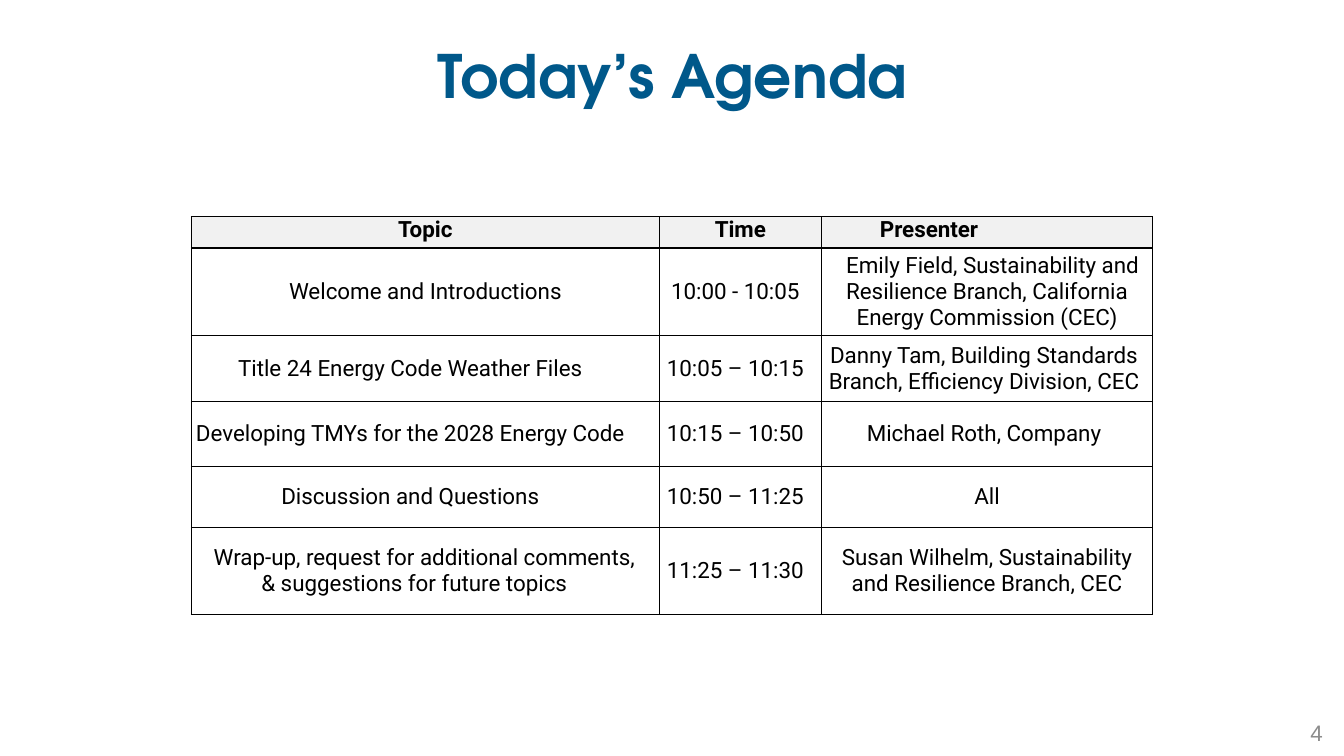
from lxml.etree import SubElement as Sub
from pptx import Presentation
from pptx.dml.color import RGBColor
from pptx.enum.text import MSO_ANCHOR as Anchor, PP_ALIGN as Align
from pptx.oxml.ns import qn
from pptx.util import Inches, Pt

WIDE, HIGH = Inches(13.33), Inches(7.5)
BLUE = RGBColor(0x00, 0x58, 0x8A)
BLACK = RGBColor(0x00, 0x00, 0x00)
GRAY = RGBColor(0x8C, 0x8C, 0x8C)
PALE = RGBColor(0xF1, 0xF1, 0xF1)

TITLE = {"name": "TeX Gyre Adventor", "size": Pt(42.7), "bold": True}
BODY = {"name": "Roboto", "size": Pt(16), "bold": False}
HEAD = BODY | {"bold": True}
PAGE = {"name": "Arial", "size": Pt(16)}

# Table grid, in percent of the slide's width and height
COLS = [34.8, 12.07, 24.65]
ROWS = [4.13, 11.6, 8.67, 8.67, 8, 11.6]

AGENDA = [
    ["Topic", "Time", "Presenter"],
    ["Welcome and Introductions", "10:00 - 10:05",
     "Emily Field, Sustainability and Resilience Branch, "
     "California Energy Commission (CEC)"],
    ["Title 24 Energy Code Weather Files", "10:05 – 10:15",
     "Danny Tam, Building Standards Branch, Efficiency Division, CEC"],
    ["Developing TMYs for the 2028 Energy Code", "10:15 – 10:50",
     "Michael Roth, Company"],
    ["Discussion and Questions", "10:50 – 11:25", "All"],
    ["Wrap-up, request for additional comments, "
     "& suggestions for future topics", "11:25 – 11:30",
     "Susan Wilhelm, Sustainability and Resilience Branch, CEC"],
]

# Right insets of body columns, and the cells that differ, in inches
RIGHT = [0.3, 0.1, 0]
INSET = {(1, 0): 0, (5, 0): 0.22, (2, 2): 0.06, (3, 2): 0.06}
INDENT = {(1, 2): 0.11, (5, 0): 0.2}


def across(share):
    return int(WIDE * share / 100)


def down(share):
    return int(HIGH * share / 100)


def place(shape, left, top, width, height):
    shape.left, shape.top = across(left), down(top)
    shape.width, shape.height = across(width), down(height)


def assign(item, values):
    for key, value in values.items():
        setattr(item, key, value)


def write(frame, text, look, color, align):
    """Fill a text frame with one formatted paragraph."""
    frame.text = text
    para = frame.paragraphs[0]
    para.alignment = align
    font = para.runs[0].font
    assign(font, look)
    font.color.rgb = color
    return para


def border(cell):
    props = cell._tc.get_or_add_tcPr()
    for side in ("lnL", "lnR", "lnT", "lnB"):
        line = Sub(props, qn(f"a:{side}"), w=str(Pt(1)))
        fill = Sub(line, qn("a:solidFill"))
        Sub(fill, qn("a:srgbClr"), val=str(BLACK))


def fill_cell(cell, row, col, text):
    head = row == 0
    right = 0 if head else INSET.get((row, col), RIGHT[col])
    left = 0.58 if head and col == 2 else 0
    assign(cell, {
        "margin_left": Inches(left), "margin_right": Inches(right),
        "margin_top": 0, "margin_bottom": 0,
        "vertical_anchor": Anchor.TOP if head else Anchor.MIDDLE,
    })
    border(cell)
    if head:
        cell.fill.solid()
        cell.fill.fore_color.rgb = PALE
    else:
        cell.fill.background()
    align = Align.LEFT if left else Align.CENTER
    para = write(cell.text_frame, text, HEAD if head else BODY, BLACK, align)
    if (row, col) in INDENT:
        props = para._p.get_or_add_pPr()
        props.set("indent", str(Inches(INDENT[row, col])))


def add_title(slide):
    title = slide.shapes.title
    place(title, 5.03, 2.53, 90, 14.8)
    title.text_frame.vertical_anchor = Anchor.MIDDLE
    write(title.text_frame, "Today’s Agenda", TITLE, BLUE, Align.CENTER)


def add_agenda(slide):
    frame = slide.shapes.add_table(
        len(ROWS), len(COLS), across(14.25), down(28.67),
        across(sum(COLS)), down(sum(ROWS)))
    table = frame.table
    table.horz_banding = False
    for col, share in zip(table.columns, COLS):
        col.width = across(share)
    for row, share in zip(table.rows, ROWS):
        row.height = down(share)
    for row, line in enumerate(AGENDA):
        for col, text in enumerate(line):
            fill_cell(table.cell(row, col), row, col, text)


def add_page(slide):
    box = slide.shapes.add_textbox(0, 0, 0, 0)
    place(box, 75.83, 94.4, 23.33, 5.33)
    frame = box.text_frame
    assign(frame, {"word_wrap": True, "vertical_anchor": Anchor.MIDDLE})
    para = write(frame, "4", PAGE, GRAY, Align.RIGHT)
    assign(para, {"line_spacing": 0.9, "space_after": Pt(8)})


def main():
    deck = Presentation()
    deck.slide_width, deck.slide_height = WIDE, HIGH
    slide = deck.slides.add_slide(deck.slide_layouts[5])
    add_title(slide)
    add_page(slide)
    add_agenda(slide)
    deck.save("out.pptx")


if __name__ == "__main__":
    main()
